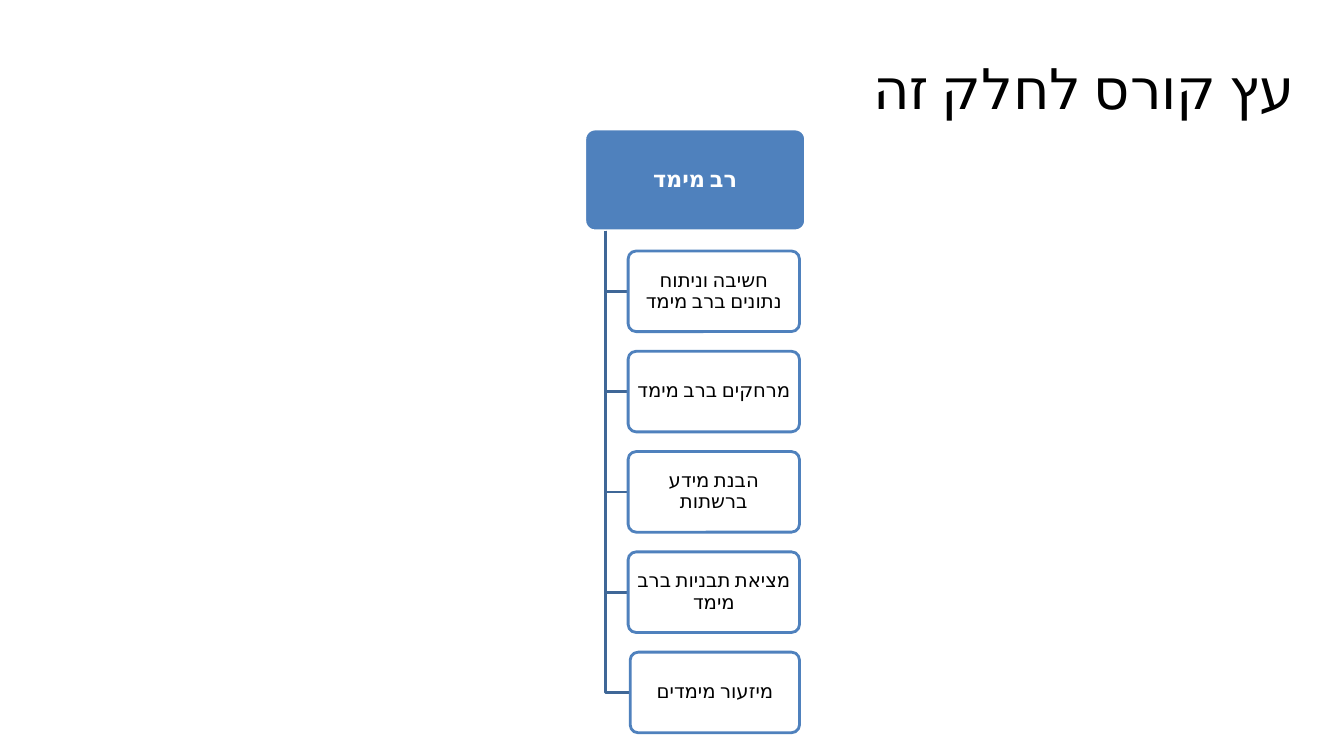
from dataclasses import dataclass

from lxml import etree
from pptx import Presentation
from pptx import util as u
from pptx.dml import color
from pptx.enum import shapes, text
from pptx.oxml import ns


@dataclass(frozen=True)
class Theme:
    font: str = "Calibri"
    ink: str = "000000"
    paper: str = "FFFFFF"
    accent: str = "4F81BD"
    branch: str = "3F6797"
    title_size: int = 40
    root_size: int = 16
    topic_size: int = 14
    line_width: int = 2


@dataclass(frozen=True)
class Node:
    label: str
    left: float
    top: float
    width: float
    height: float
    fill: str
    line: str
    ink: str
    size: int
    bold: bool = False


THEME = Theme()
TITLE = "עץ קורס לחלק זה"
TOPICS = (
    "חשיבה וניתוח נתונים ברב מימד",
    "מרחקים ברב מימד",
    "הבנת מידע ברשתות",
    "מציאת תבניות ברב מימד",
    "מיזעור מימדים",
)
ROOT = Node("רב מימד", 5.8, 1.28, 2.19, 1.01,
            THEME.accent, THEME.paper, THEME.paper, THEME.root_size, True)

TRUNK_X = 6.01
TOPIC_RIGHT, TOPIC_HEIGHT = 7.93, 0.8
FIRST_TOP, LAST_TOP = 2.49, 6.47
TOPIC_STEP = (LAST_TOP - FIRST_TOP) / (len(TOPICS) - 1)


def rgb(code: str) -> color.RGBColor:
    return color.RGBColor.from_string(code)


def write(box, label: str, size: int, ink: str, align, inset: tuple[float, float],
          spacing: float = 1.0, bold: bool = False) -> None:
    """Fill a box with one right-to-left paragraph."""
    frame = box.text_frame
    across, down = (u.Inches(value) for value in inset)
    frame_format = {
        "word_wrap": True, "vertical_anchor": text.MSO_ANCHOR.MIDDLE,
        "margin_left": across, "margin_right": across,
        "margin_top": down, "margin_bottom": down,
    }
    for name, value in frame_format.items():
        setattr(frame, name, value)

    para = frame.paragraphs[0]
    para.alignment, para.line_spacing = align, spacing
    para._p.get_or_add_pPr().set("rtl", "1")

    span = para.add_run()
    span.text = label
    span_format = {"name": THEME.font, "size": u.Pt(size), "bold": bold}
    for name, value in span_format.items():
        setattr(span.font, name, value)
    span.font.color.rgb = rgb(ink)
    # Hebrew takes its typeface from the complex-script font
    properties = span._r.get_or_add_rPr()
    properties.set("lang", "he-IL")
    etree.SubElement(properties, ns.qn("a:cs"), typeface=THEME.font)


def outline(shape, code: str) -> None:
    shape.shadow.inherit = False
    shape.line.color.rgb = rgb(code)
    shape.line.width = u.Pt(THEME.line_width)


def add_node(page, node: Node) -> None:
    box = page.shapes.add_shape(
        shapes.MSO_SHAPE.ROUNDED_RECTANGLE,
        *map(u.Inches, (node.left, node.top, node.width, node.height)))
    box.adjustments[0] = 0.1
    box.fill.solid()
    box.fill.fore_color.rgb = rgb(node.fill)
    outline(box, node.line)
    write(box, node.label, node.size, node.ink, text.PP_ALIGN.CENTER,
          (0.03, 0.02), 0.9, node.bold)


def add_branch(page, node: Node) -> None:
    """Draw the elbow from the root down to the middle of a topic."""
    start, middle = ROOT.top + ROOT.height, node.top + node.height / 2
    builder = page.shapes.build_freeform(u.Inches(TRUNK_X), u.Inches(start))
    corners = [(TRUNK_X, middle), (node.left, middle)]
    builder.add_line_segments(
        [(u.Inches(x), u.Inches(y)) for x, y in corners], close=False)
    elbow = builder.convert_to_shape()
    elbow.fill.background()
    outline(elbow, THEME.branch)


def main() -> None:
    deck = Presentation()
    deck.slide_width, deck.slide_height = u.Inches(13.33), u.Inches(7.5)
    page = deck.slides.add_slide(deck.slide_layouts[6])

    # Title
    heading = page.shapes.add_textbox(*map(u.Inches, (2.14, 0.12, 10.8, 1.48)))
    write(heading, TITLE, THEME.title_size, THEME.ink, text.PP_ALIGN.RIGHT, (0.1, 0.05))

    # Course tree: root, then each topic with its branch
    add_node(page, ROOT)
    for index, label in enumerate(TOPICS):
        left = 6.25 if index == len(TOPICS) - 1 else 6.23
        topic = Node(label, left, FIRST_TOP + index * TOPIC_STEP,
                     TOPIC_RIGHT - left, TOPIC_HEIGHT,
                     THEME.paper, THEME.accent, THEME.ink, THEME.topic_size)
        add_branch(page, topic)
        add_node(page, topic)

    deck.save("out.pptx")


if __name__ == "__main__":
    main()
